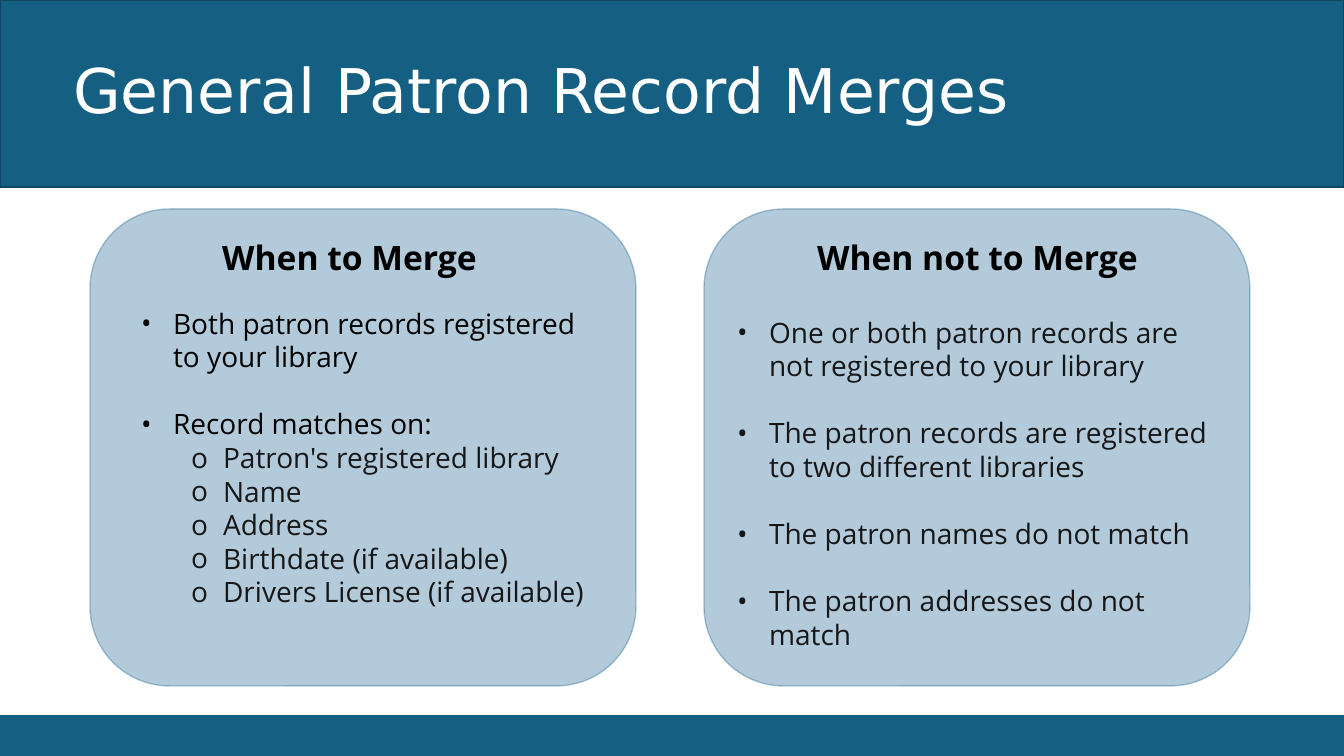
from dataclasses import dataclass

from pptx import Presentation
from pptx import util as u
from pptx.dml.color import RGBColor
from pptx.enum import shapes, text
from pptx.oxml.ns import qn
from lxml import etree


@dataclass(frozen=True)
class Theme:
    """Colours, fonts and type sizes of the slide."""
    band: str = "156082"
    band_line: str = "104760"
    card: str = "025283"
    card_alpha: int = 30
    white: str = "FFFFFF"
    black: str = "000000"
    ink: str = "161617"
    title_font: str = "DejaVu Sans"
    body_font: str = "Open Sans"
    title_size: int = 44
    heading_size: int = 24
    body_size: int = 20
    gap: int = 24


T = Theme()
W, H = 1344, 756
HANG = 32
LEVEL_STEP = 50

MERGE = [
    (0, "Both patron records registered to your library", T.black),
    (0, "Record matches on:", T.black),
    (1, "Patron's registered library", T.ink),
    (1, "Name", T.ink),
    (1, "Address", T.ink),
    (1, "Birthdate (if available)", T.ink),
    (1, "Drivers License (if available)", T.ink),
]
NO_MERGE = [
    (0, "One or both patron records are not registered to your library", T.ink),
    (0, "The patron records are registered to two different libraries", T.ink),
    (0, "The patron names do not match", T.ink),
    (0, "The patron addresses do not match", T.ink),
]


def px(n):
    """Turn slide pixels into EMU."""
    return u.Emu(round(n * 914400 / 100.8))


def add_box(s, kind, box, fill, line=None, alpha=None):
    """Add a filled shape with an optional outline and opacity."""
    sp = s.shapes.add_shape(kind, *map(px, box))
    sp.shadow.inherit = False
    sp.fill.solid()
    sp.fill.fore_color.rgb = RGBColor.from_string(fill)
    if line:
        sp.line.color.rgb = RGBColor.from_string(line)
        sp.line.width = u.Pt(1)
    else:
        sp.line.fill.background()
    if alpha:
        for clr in sp.element.spPr.iter(qn("a:srgbClr")):
            etree.SubElement(clr, qn("a:alpha")).set("val", str(alpha * 1000))


def place(s, ph, box, anchor):
    """Move a placeholder to the front and into its box."""
    s.shapes.element.append(ph.element)
    ph.left, ph.top, ph.width, ph.height = map(px, box)
    tf = ph.text_frame
    tf.word_wrap = True
    tf.auto_size = text.MSO_AUTO_SIZE.NONE
    tf.vertical_anchor = anchor
    return tf


def add_run(p, words, font, size, color, bold=False):
    """Add one formatted run."""
    r = p.add_run()
    r.text = words
    r.font.name = font
    r.font.size = u.Pt(size)
    r.font.bold = bold
    r.font.color.rgb = RGBColor.from_string(color)


def set_bullet(p, level):
    """Give a paragraph its hanging indent and bullet."""
    p.level = level
    pPr = p._p.get_or_add_pPr()
    pPr.set("marL", str(px(HANG + level * LEVEL_STEP)))
    pPr.set("indent", str(-px(HANG)))
    etree.SubElement(pPr, qn("a:buFont")).set("typeface", T.body_font)
    etree.SubElement(pPr, qn("a:buChar")).set("char", "•o"[level])


def header(s, box, words):
    """Draw the title band and its title."""
    x, y, w, h = box
    add_box(s, shapes.MSO_SHAPE.RECTANGLE, box, T.band, T.band_line)
    tf = place(s, s.shapes.title, (x + 63, y, w - 63, h), text.MSO_ANCHOR.MIDDLE)
    p = tf.paragraphs[0]
    p.alignment = text.PP_ALIGN.LEFT
    p.line_spacing = 0.9
    add_run(p, words, T.title_font, T.title_size, T.white)


def card(s, box, heading, items, phs, heading_dx, list_box):
    """Draw a rounded card with a heading and a bulleted list."""
    x, y, w, h = box
    add_box(s, shapes.MSO_SHAPE.ROUNDED_RECTANGLE, box, T.card, T.card, T.card_alpha)
    tf = place(s, phs[0], (x + heading_dx, y + 23, 403, 50), text.MSO_ANCHOR.TOP)
    p = tf.paragraphs[0]
    p.alignment = text.PP_ALIGN.CENTER
    p.space_before = u.Pt(0)
    add_run(p, heading, T.body_font, T.heading_size, T.black, True)

    dx, dy, lw, lh = list_box
    tf = place(s, phs[1], (x + dx, y + dy, lw, lh), text.MSO_ANCHOR.TOP)
    for i, (level, words, color) in enumerate(items):
        p = tf.add_paragraph() if i else tf.paragraphs[0]
        p.space_before = u.Pt(T.gap if i and level == 0 else 0)
        set_bullet(p, level)
        add_run(p, words, T.body_font, T.body_size, color)


def main():
    """Build and save the slide."""
    prs = Presentation()
    prs.slide_width, prs.slide_height = px(W), px(H)
    s = prs.slides.add_slide(prs.slide_layouts.get_by_name("Comparison"))
    ph = {sp.placeholder_format.idx: sp for sp in s.placeholders}
    add_box(s, shapes.MSO_SHAPE.RECTANGLE, (0, 715, W, 41), T.band)
    header(s, (0, 0, W, 187), "General Patron Record Merges")
    card(s, (90, 209, 546, 477), "When to Merge", MERGE,
         (ph[1], ph[2]), 58, (41, 92, 468, 346))
    card(s, (704, 209, 546, 477), "When not to Merge", NO_MERGE,
         (ph[3], ph[4]), 72, (23, 101, 500, 346))
    prs.save("out.pptx")


if __name__ == "__main__":
    main()
